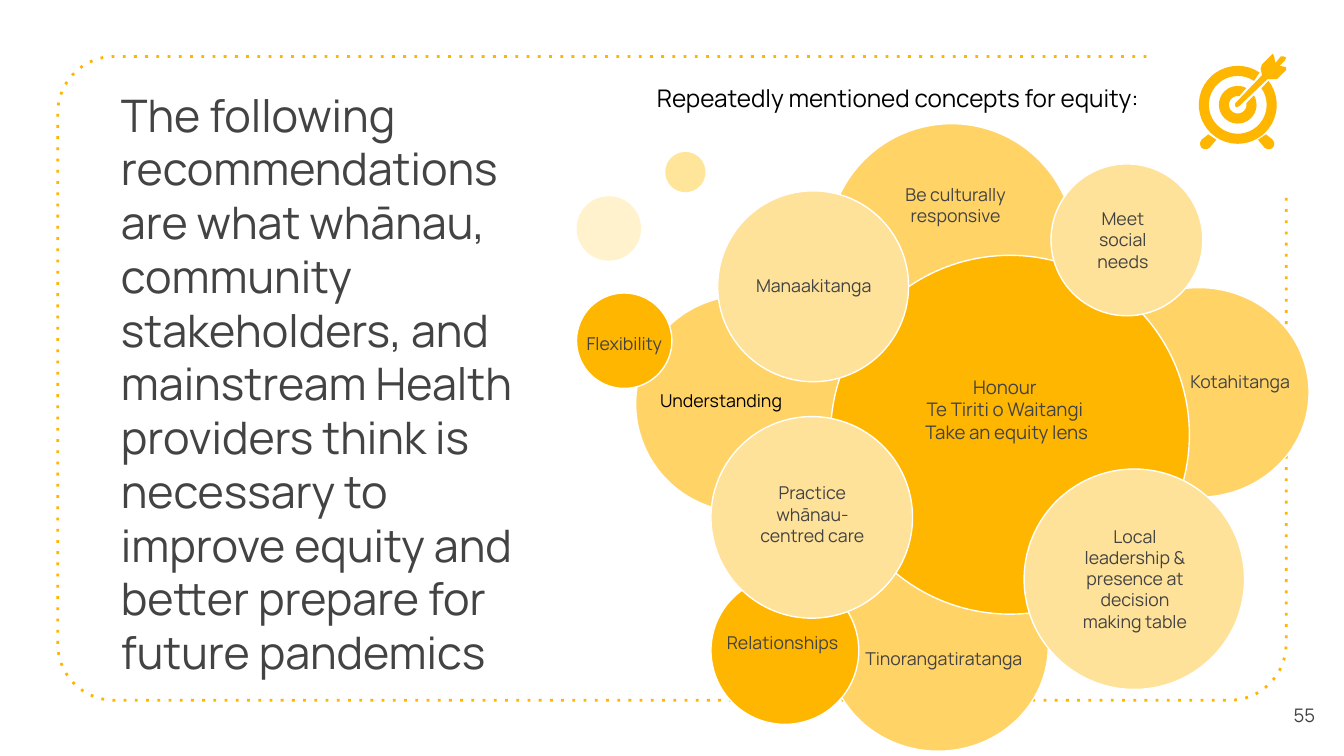
import math
from dataclasses import dataclass

from pptx import Presentation, util as u
from pptx.dml.color import RGBColor
from pptx.enum import dml, shapes, text


@dataclass(frozen=True)
class Theme:
    font: str = "Manrope"
    amber: str = "FFB600"
    gold: str = "FFD366"
    sand: str = "FFE299"
    butter: str = "FFE599"
    cream: str = "FFF2CC"
    white: str = "FFFFFF"
    grey: str = "434343"
    black: str = "000000"
    title: float = 24
    heading: float = 13
    centre: float = 10
    label: float = 9.5
    dotted: float = 1.5
    outline: float = 0.75


THEME = Theme()
PX_PER_INCH = 100
PAGE = (1000, 562.5)
INSET = 10
TILT = 250

TITLE = (
    "The following recommendations are what whānau, community stakeholders, "
    "and mainstream Health providers think is necessary to improve equity and "
    "better prepare for future pandemics"
)
TITLE_BOX = (80, 55, 343, 463)

BACK_CIRCLES = [
    (616, 403, 164, 156, THEME.gold, True, 0),
    (810, 214, 164, 156, THEME.gold, True, 0),
    (529, 429, 110, 110, THEME.amber, True, 0),
    (473, 220, 161, 161, THEME.gold, True, TILT),
    (429, 146, 48, 48, THEME.cream, False, TILT),
    (616, 92, 184, 184, THEME.gold, True, TILT),
    (429, 218, 71, 71, THEME.amber, True, TILT),
    (495, 113, 30, 30, THEME.butter, False, TILT),
    (618, 190, 267, 267, THEME.amber, True, 0),
]
FRONT_CIRCLES = [
    (534, 142, 142, 142, THEME.sand, True, 0),
    (529, 310, 150, 150, THEME.sand, True, 0),
    (782, 122, 113, 113, THEME.sand, True, 0),
    (762, 349, 164, 164, THEME.sand, True, 0),
]

FIXED = text.MSO_AUTO_SIZE.NONE
GROWING = text.MSO_AUTO_SIZE.SHAPE_TO_FIT_TEXT
MIDDLE = {"anchor": text.MSO_ANCHOR.MIDDLE, "align": text.PP_ALIGN.CENTER, "fit": FIXED}
TOP = {"anchor": text.MSO_ANCHOR.TOP, "align": text.PP_ALIGN.LEFT, "fit": FIXED}
GROW = {**TOP, "fit": GROWING}
LABELS = [
    ("Repeatedly mentioned concepts for equity:", (479, 52, 433, 42), GROW, THEME.heading, THEME.black),
    ("Honour \vTe Tiriti o Waitangi \vTake an equity lens", (632, 241, 234, 127), MIDDLE, THEME.centre, THEME.grey),
    ("Meet social needs", (795, 141, 81, 75), MIDDLE, THEME.label, THEME.grey),
    ("Be culturally responsive", (659, 115, 104, 75), MIDDLE, THEME.label, THEME.grey),
    ("Understanding", (476, 265, 121, 66), MIDDLE, THEME.label, THEME.black),
    ("Local leadership & presence at decision making table", (786, 379, 117, 103), MIDDLE, THEME.label, THEME.grey),
    ("Tinorangatiratanga", (634, 474, 153, 36), GROW, THEME.label, THEME.grey),
    ("Relationships", (531, 462, 108, 36), GROW, THEME.label, THEME.grey),
    ("Kotahitanga", (876, 268, 104, 36), GROW, THEME.label, THEME.grey),
    ("Flexibility", (419, 218, 91, 75), MIDDLE, THEME.label, THEME.grey),
    ("Manaakitanga", (529, 161, 153, 103), MIDDLE, THEME.label, THEME.grey),
    ("Practice whānau-\ncentred care", (546, 331, 117, 103), MIDDLE, THEME.label, THEME.grey),
    ("55", (941, 502, 59, 60), MIDDLE, THEME.centre, THEME.grey),
]

FRAME_RADIUS = 42
FRAME_ENDS = ((853, 42), (957, 146))
FRAME_CORNERS = [((85, 84), 270, 180), ((85, 479), 180, 90), ((915, 479), 90, 0)]

TARGET = (921, 78)
RINGS = [
    ((29, -38, 304), (21.5, -35, 304)),
    ((14, -30, 297), (6.5, -10, 280)),
]
FOOT = [
    (899, 100), (894, 104), (893, 106), (893, 108), (894, 110), (896, 111),
    (898, 111), (900, 110), (905, 104), (902, 102),
]
DART = [
    (947, 40), (946, 41), (940, 47), (939, 48), (938, 51), (939, 56),
    (919, 77), (919, 79), (920, 80), (922, 79), (943, 59), (947, 59),
    (950, 59), (957, 52), (957, 50), (952, 49), (956, 45), (957, 43),
    (955, 42), (953, 42), (949, 47), (948, 42),
]


def px(length):
    return u.Emu(round(length * u.Inches(1) / PX_PER_INCH))


def colour(value):
    return RGBColor.from_string(value)


def arc(centre, radius, start, stop, steps=40):
    angles = [math.radians(start + (stop - start) * i / steps) for i in range(steps + 1)]
    return [(centre[0] + radius * math.cos(a), centre[1] + radius * math.sin(a)) for a in angles]


def paint(shape, fill=None, line=None, width=THEME.outline):
    shape.shadow.inherit = False
    if fill:
        shape.fill.solid()
        shape.fill.fore_color.rgb = colour(fill)
    else:
        shape.fill.background()
    if line:
        shape.line.color.rgb = colour(line)
        shape.line.width = u.Pt(width)
    else:
        shape.line.fill.background()


def add_outline(page, points, close=True):
    start, *rest = [(px(x), px(y)) for x, y in points]
    builder = page.shapes.build_freeform(*start, scale=1.0)
    builder.add_line_segments(rest, close=close)
    return builder.convert_to_shape()


def add_frame(page):
    first, last = FRAME_ENDS
    corners = [p for centre, a, b in FRAME_CORNERS for p in arc(centre, FRAME_RADIUS, a, b, 16)]
    frame = add_outline(page, [first, *corners, last], close=False)
    paint(frame, line=THEME.amber, width=THEME.dotted)
    frame.line.dash_style = dml.MSO_LINE.ROUND_DOT
    for dash in frame.element.xpath(".//a:prstDash"):
        dash.set("val", "dot")


def add_target(page):
    rings = [
        arc(TARGET, *outer) + arc(TARGET, *inner)[::-1]
        for outer, inner in RINGS
    ]
    right_foot = [(2 * TARGET[0] - 1 - x, y) for x, y in FOOT]
    for points in [*rings, FOOT, right_foot, DART]:
        paint(add_outline(page, points), fill=THEME.amber)


def add_circles(page, circles):
    for *place, fill, outlined, turn in circles:
        circle = page.shapes.add_shape(shapes.MSO_SHAPE.OVAL, *map(px, place))
        circle.rotation = turn
        paint(circle, fill, THEME.white if outlined else None)


def write(box, words, layout, size, ink):
    frame = box.text_frame
    frame.text = words
    settings = {
        "word_wrap": True,
        "auto_size": layout["fit"],
        "vertical_anchor": layout["anchor"],
        **{f"margin_{side}": px(INSET) for side in ("left", "top", "right", "bottom")},
    }
    for name, value in settings.items():
        setattr(frame, name, value)
    for para in frame.paragraphs:
        para.alignment = layout["align"]
        for span in para.runs:
            for name, value in {"name": THEME.font, "size": u.Pt(size)}.items():
                setattr(span.font, name, value)
            span.font.color.rgb = colour(ink)


def main():
    deck = Presentation()
    deck.slide_width, deck.slide_height = map(px, PAGE)
    page = deck.slides.add_slide(deck.slide_layouts.get_by_name("Title Only"))
    title = page.shapes.title
    for name, value in zip(("left", "top", "width", "height"), TITLE_BOX):
        setattr(title, name, px(value))
    write(title, TITLE, TOP, THEME.title, THEME.grey)
    add_frame(page)
    add_circles(page, BACK_CIRCLES)
    add_target(page)
    add_circles(page, FRONT_CIRCLES)
    for words, place, layout, size, ink in LABELS:
        write(page.shapes.add_textbox(*map(px, place)), words, layout, size, ink)
    deck.save("out.pptx")


if __name__ == "__main__":
    main()
